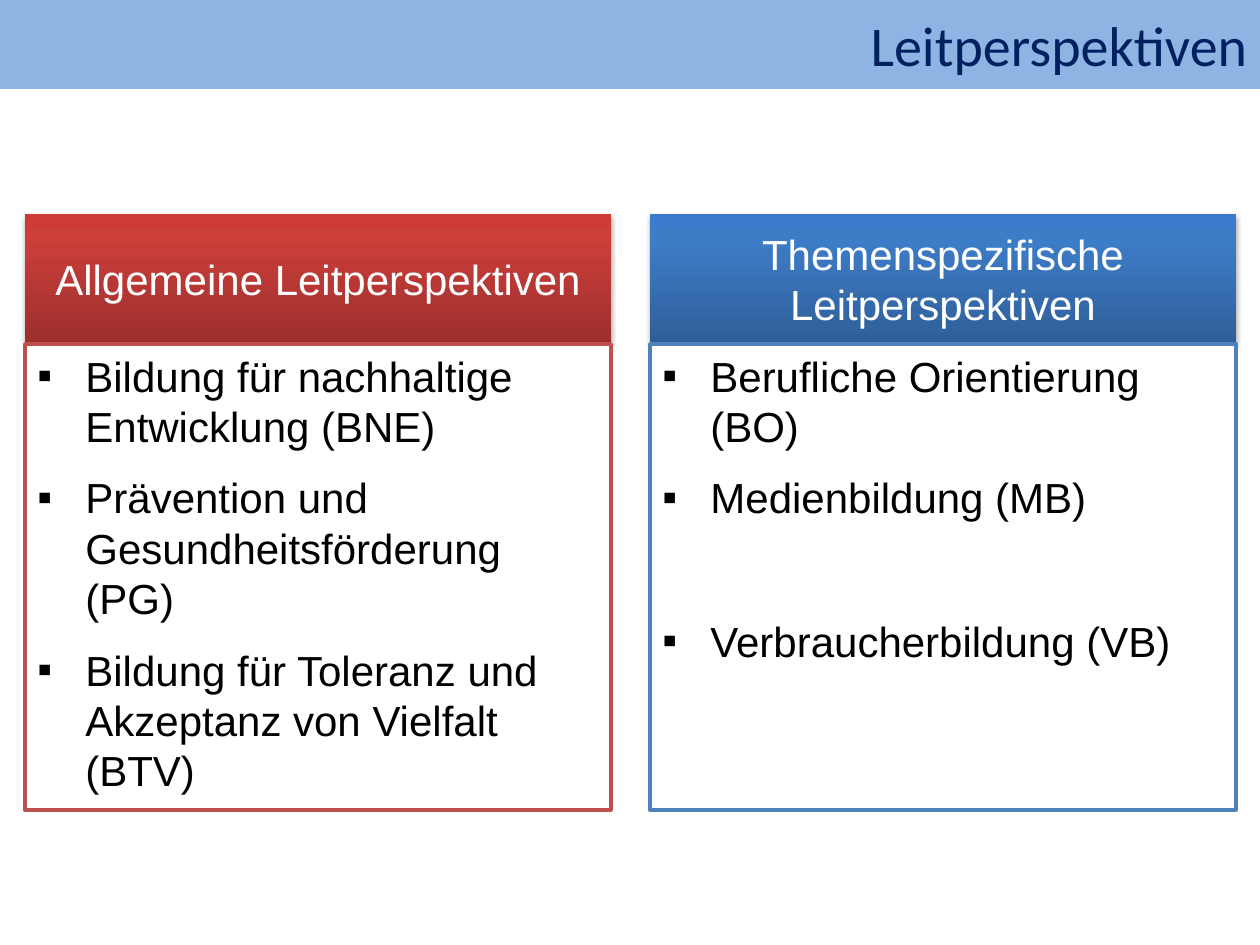
from dataclasses import dataclass

from lxml import etree
from pptx import Presentation
from pptx import util as u
from pptx.dml.color import RGBColor
from pptx.enum import shapes, text
from pptx.oxml.ns import qn

PX_PER_INCH = 126


@dataclass(frozen=True)
class Theme:
    banner: str = "8EB4E3"
    title: str = "002060"
    paper: str = "FFFFFF"
    ink: str = "000000"
    shadow: str = "000000"
    title_font: str = "Calibri"
    body_font: str = "Arial"
    title_size: int = 32
    body_size: int = 24


@dataclass(frozen=True)
class Item:
    wording: str
    space_after: int = 12


@dataclass(frozen=True)
class Column:
    left: int
    heading: str
    gradient: tuple[str, str, str]  # bottom, upper part, top
    border: str
    items: tuple[Item, ...]


THEME = Theme()
COLUMN_WIDTH = 586
HEAD_TOP, HEAD_HEIGHT = 214, 129
BODY_TOP, BODY_HEIGHT = 344, 466
INDENT = 48

COLUMNS = (
    Column(25, "Allgemeine Leitperspektiven", ("9C2F2D", "CB3E3A", "CE3B37"), "C0504D", (
        Item("Bildung für nachhaltige Entwicklung (BNE)"),
        Item("Prävention und Gesundheitsförderung (PG)"),
        Item("Bildung für Toleranz und Akzeptanz von Vielfalt (BTV)", 0))),
    Column(650, "Themenspezifische Leitperspektiven", ("2F5F99", "3D7CC7", "3A7CCB"), "4F81BD", (
        Item("Berufliche Orientierung (BO)"),
        Item("Medienbildung (MB)", 53),
        Item("Verbraucherbildung (VB)", 0))),
)


def px(length: int) -> u.Emu:
    return u.Emu(round(length * 914400 / PX_PER_INCH))


def add_box(page, left: int, top: int, width: int, height: int, fill: str):
    box = page.shapes.add_shape(
        shapes.MSO_SHAPE.RECTANGLE, px(left), px(top), px(width), px(height))
    box.shadow.inherit = False
    box.fill.solid()
    box.fill.fore_color.rgb = RGBColor.from_string(fill)
    box.line.fill.background()
    box.text_frame.word_wrap = True
    return box


def add_span(para, wording: str, font: str, size: int, color: str) -> None:
    span = para.add_run()
    span.text = wording
    span.font.name = font
    span.font.size = u.Pt(size)
    span.font.color.rgb = RGBColor.from_string(color)


def add_label(box, wording: str, align, font: str, size: int, color: str) -> None:
    box.text_frame.vertical_anchor = text.MSO_ANCHOR.MIDDLE
    para = box.text_frame.paragraphs[0]
    para.alignment = align
    add_span(para, wording, font, size, color)


def set_gradient(box, colors: tuple[str, str, str]) -> None:
    box.fill.gradient()
    gradient = box.fill._fill._gradFill
    stops = gradient.find(qn("a:gsLst"))
    for stop in list(stops):
        stops.remove(stop)
    for percent, color in zip((0, 80, 100), colors):
        stop = etree.SubElement(stops, qn("a:gs"), pos=str(percent * 1000))
        etree.SubElement(stop, qn("a:srgbClr"), val=color)
    gradient.find(qn("a:lin")).set("ang", str(270 * 60000))


def set_shadow(box) -> None:
    effects = box._element.spPr.find(qn("a:effectLst"))
    shadow = etree.SubElement(
        effects, qn("a:outerShdw"), blurRad=str(u.Pt(3.1)), dist=str(u.Pt(1.8)),
        dir=str(90 * 60000), rotWithShape="0")
    color = etree.SubElement(shadow, qn("a:srgbClr"), val=THEME.shadow)
    etree.SubElement(color, qn("a:alpha"), val="35000")


def set_bullet(para) -> None:
    properties = para._p.get_or_add_pPr()
    properties.set("marL", str(px(INDENT)))
    properties.set("indent", str(-px(INDENT)))
    etree.SubElement(properties, qn("a:buFont"), typeface=THEME.body_font)
    etree.SubElement(properties, qn("a:buChar"), char="▪")


def draw_column(page, column: Column) -> None:
    # Heading
    head = add_box(page, column.left, HEAD_TOP, COLUMN_WIDTH, HEAD_HEIGHT, column.gradient[0])
    set_gradient(head, column.gradient)
    set_shadow(head)
    add_label(head, column.heading, text.PP_ALIGN.CENTER,
              THEME.body_font, THEME.body_size, THEME.paper)

    # Bulleted list
    body = add_box(page, column.left, BODY_TOP, COLUMN_WIDTH, BODY_HEIGHT, THEME.paper)
    body.line.color.rgb = RGBColor.from_string(column.border)
    body.line.width = u.Pt(2)
    frame = body.text_frame
    frame.vertical_anchor = text.MSO_ANCHOR.TOP
    for index, item in enumerate(column.items):
        para = frame.add_paragraph() if index else frame.paragraphs[0]
        para.alignment = text.PP_ALIGN.LEFT
        para.space_after = u.Pt(item.space_after)
        set_bullet(para)
        add_span(para, item.wording, THEME.body_font, THEME.body_size, THEME.ink)


def main() -> None:
    deck = Presentation()
    deck.slide_width, deck.slide_height = u.Inches(10), u.Inches(7.5)
    page = deck.slides.add_slide(deck.slide_layouts[6])

    for column in COLUMNS:
        draw_column(page, column)

    # Title banner
    banner = add_box(page, -1, 0, 1261, 89, THEME.banner)
    add_label(banner, "Leitperspektiven", text.PP_ALIGN.RIGHT,
              THEME.title_font, THEME.title_size, THEME.title)

    deck.save("out.pptx")


if __name__ == "__main__":
    main()
